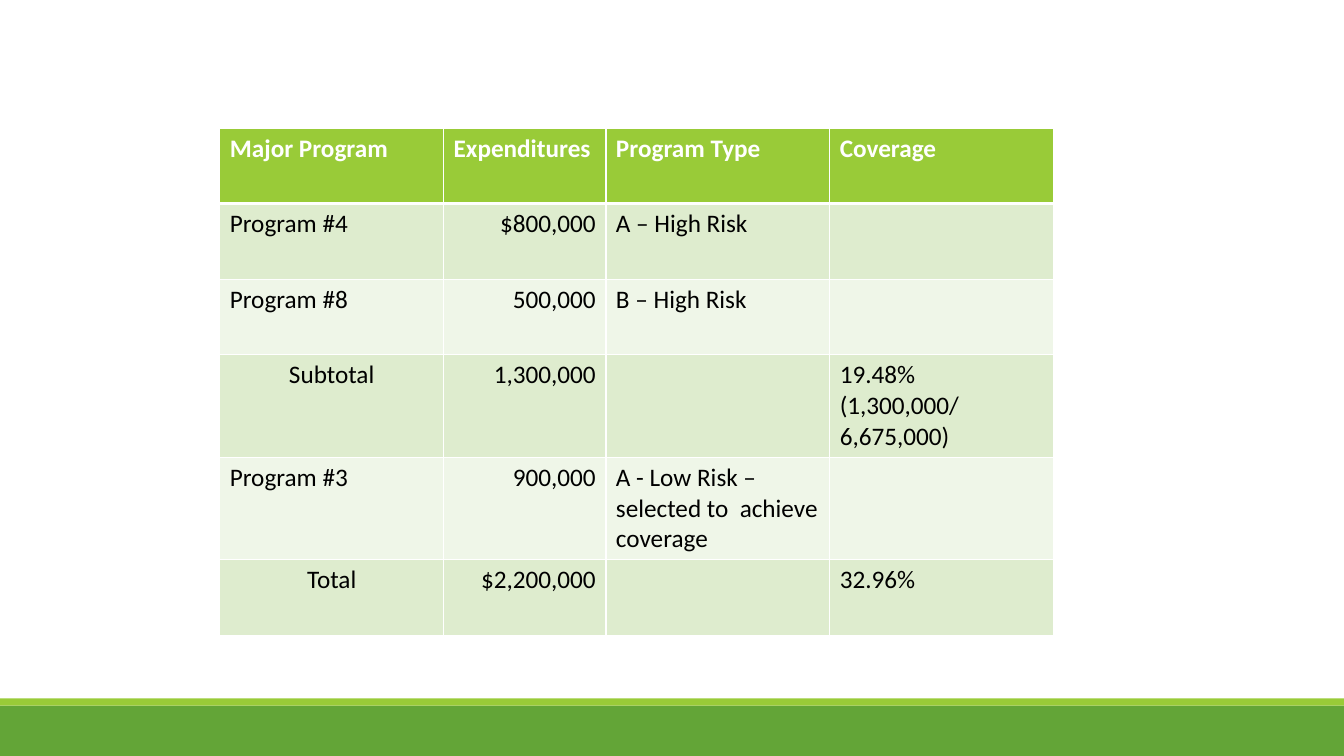
from dataclasses import dataclass

from lxml.etree import SubElement
from pptx import Presentation
from pptx.dml.color import RGBColor
from pptx.enum.shapes import MSO_SHAPE as Preset
from pptx.enum.text import PP_ALIGN as Align
from pptx.oxml.ns import qn
from pptx.slide import Slide
from pptx.table import _Cell as Cell
from pptx.util import Inches, Pt


@dataclass(frozen=True)
class Theme:
    font: str = "Calibri"
    text_size: int = 18
    lime: str = "99CB38"
    green: str = "63A537"
    odd_band: str = "DEECCE"
    even_band: str = "EFF6E8"
    white: str = "FFFFFF"
    black: str = "000000"
    rule: int = 1
    heading_rule: int = 3


@dataclass(frozen=True)
class Grid:
    columns: int = 1333
    rows: int = 750
    width: int = Inches(13.33)
    height: int = Inches(7.5)

    def across(self, columns: int) -> int:
        return round(self.width * columns / self.columns)

    def down(self, rows: int) -> int:
        return round(self.height * rows / self.rows)


@dataclass(frozen=True)
class Band:
    top: int
    height: int
    color: str


@dataclass(frozen=True)
class Program:
    name: str
    expenditures: str
    kind: str = ""
    coverage: str = ""
    is_sum: bool = False


THEME = Theme()
GRID = Grid()
FOOTER_BANDS = (Band(700, 50, THEME.green), Band(693, 7, THEME.lime))
TABLE_LEFT, TABLE_TOP, ROW_HEIGHT = 218, 127, 75
COLUMN_WIDTHS = (222, 161, 222, 222)
HEADINGS = ("Major Program", "Expenditures", "Program Type", "Coverage")
PROGRAMS = (
    Program("Program #4", "$800,000", "A – High Risk"),
    Program("Program #8", "500,000", "B – High Risk"),
    Program("Subtotal", "1,300,000",
            coverage="19.48%\n(1,300,000/ 6,675,000)", is_sum=True),
    Program("Program #3", "900,000", "A - Low Risk – selected to  achieve coverage"),
    Program("Total", "$2,200,000", coverage="32.96%", is_sum=True),
)


def draw_band(slide: Slide, band: Band) -> None:
    strip = slide.shapes.add_shape(
        Preset.RECTANGLE, 0, GRID.down(band.top), GRID.width, GRID.down(band.height))
    strip.shadow.inherit = False
    strip.fill.solid()
    strip.fill.fore_color.rgb = RGBColor.from_string(band.color)
    strip.line.fill.background()


def write(cell: Cell, text: str, *, color: str = THEME.black, bold: bool = False,
          align: Align = Align.LEFT) -> None:
    paragraph = cell.text_frame.paragraphs[0]
    paragraph.text = text
    paragraph.alignment = align
    for run in paragraph.runs:
        run.font.name = THEME.font
        run.font.size = Pt(THEME.text_size)
        run.font.bold = bold
        run.font.color.rgb = RGBColor.from_string(color)


def paint(cell: Cell, color: str, top: int, bottom: int) -> None:
    cell.fill.solid()
    cell.fill.fore_color.rgb = RGBColor.from_string(color)
    properties = cell._tc.get_or_add_tcPr()
    sides = {"a:lnL": THEME.rule, "a:lnR": THEME.rule, "a:lnT": top, "a:lnB": bottom}
    for position, (side, points) in enumerate(sides.items()):
        border = SubElement(properties, qn(side), w=str(Pt(points)))
        SubElement(SubElement(border, qn("a:solidFill")), qn("a:srgbClr"), val=THEME.white)
        properties.insert(position, border)


def draw_programs(slide: Slide) -> None:
    row_count = len(PROGRAMS) + 1
    coverage_table = slide.shapes.add_table(
        row_count, len(HEADINGS), GRID.across(TABLE_LEFT), GRID.down(TABLE_TOP),
        GRID.across(sum(COLUMN_WIDTHS)), GRID.down(ROW_HEIGHT * row_count)).table
    for column, width in zip(coverage_table.columns, COLUMN_WIDTHS):
        column.width = GRID.across(width)
    for column, heading in enumerate(HEADINGS):
        cell = coverage_table.cell(0, column)
        write(cell, heading, color=THEME.white, bold=True)
        paint(cell, THEME.lime, THEME.rule, THEME.heading_rule)
    for row, program in enumerate(PROGRAMS, start=1):
        name_align = Align.CENTER if program.is_sum else Align.LEFT
        entries = (
            (program.name, name_align),
            (program.expenditures, Align.RIGHT),
            (program.kind, Align.LEFT),
            (program.coverage, Align.LEFT),
        )
        for column, (text, align) in enumerate(entries):
            cell = coverage_table.cell(row, column)
            write(cell, text, align=align)
            paint(cell, THEME.odd_band if row % 2 else THEME.even_band,
                  THEME.heading_rule if row == 1 else THEME.rule, THEME.rule)


def main() -> None:
    deck = Presentation()
    deck.slide_width, deck.slide_height = GRID.width, GRID.height
    slide = deck.slides.add_slide(deck.slide_layouts[6])
    for band in FOOTER_BANDS:
        draw_band(slide, band)
    draw_programs(slide)
    deck.save("out.pptx")


if __name__ == "__main__":
    main()
